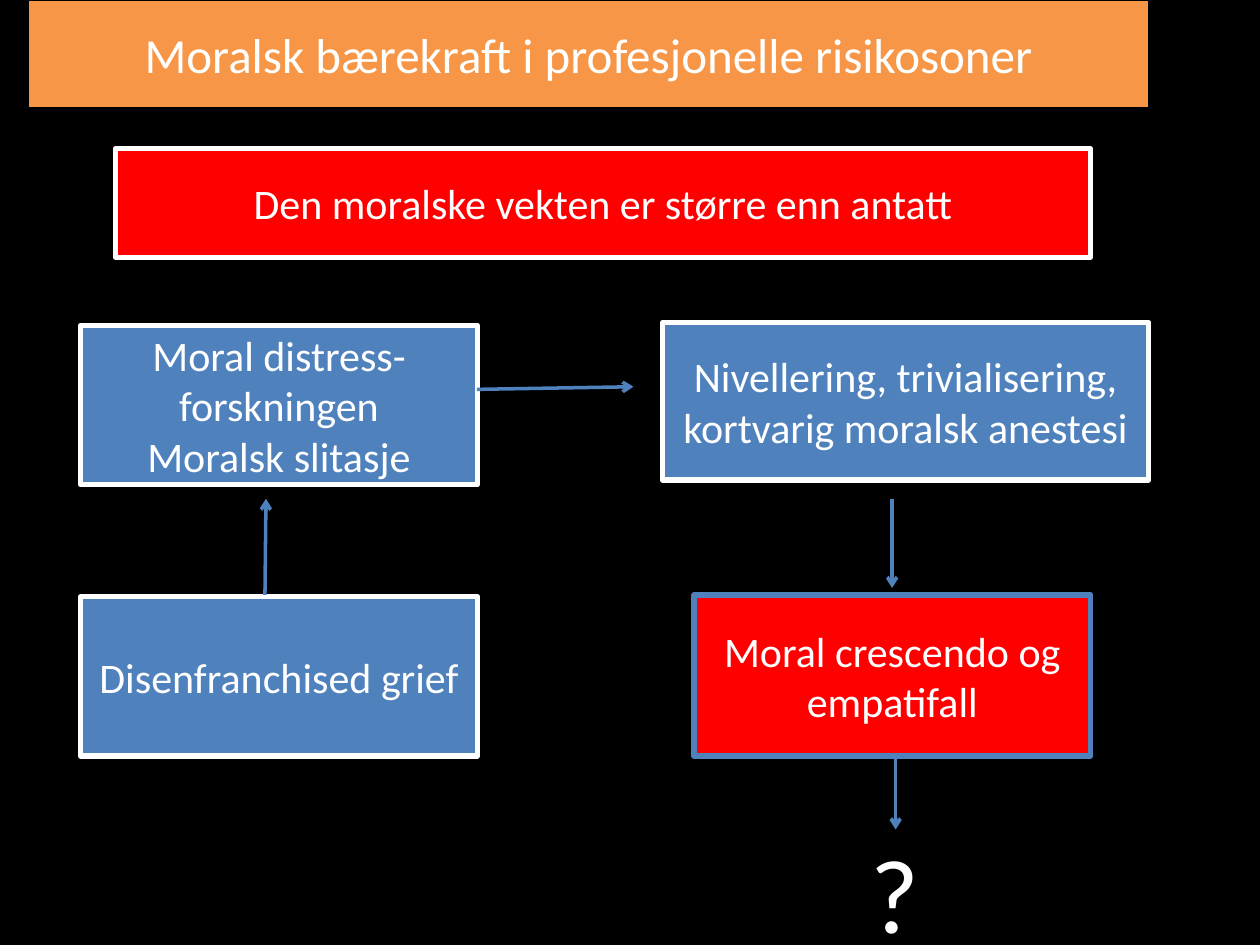
"""Build a slide on moral strain as a flow of boxes and arrows."""
from lxml import etree
from pptx import Presentation
from pptx import util as u
from pptx.dml.color import RGBColor
from pptx.enum import shapes, text
from pptx.oxml.ns import qn

HUES = {"black": "000000", "white": "FFFFFF", "blue": "4F81BD",
        "red": "FF0000", "orange": "F79646"}


class Deck:
    """Hold the style and the current slide."""

    def __init__(self, wide, high):
        self.file = Presentation()
        self.file.slide_width, self.file.slide_height = u.Pt(wide), u.Pt(high)
        self.slide = self.file.slides.add_slide(self.file.slide_layouts[5])
        self.font = "Calibri"
        self.paint(self.slide.background.fill, "black")

    def paint(self, fill, hue):
        """Fill with a named colour."""
        fill.solid()
        fill.fore_color.rgb = RGBColor.from_string(HUES[hue])

    def edge(self, line, hue, width):
        """Set the colour and width of a line."""
        self.paint(line.fill, hue)
        line.width = u.Pt(width)

    def letter(self, shape, words, size, align=text.PP_ALIGN.CENTER):
        """Set the text of a shape and format its runs."""
        frame = shape.text_frame
        frame.text = words
        for para in frame.paragraphs:
            para.alignment = align
            for run in para.runs:
                run.font.name, run.font.size = self.font, u.Pt(size)
                run.font.color.rgb = RGBColor.from_string(HUES["white"])
        return frame

    def title(self, words, area):
        """Place the title as a coloured bar."""
        bar = self.slide.shapes.title
        bar.left, bar.top, bar.width, bar.height = map(u.Pt, area)
        self.paint(bar.fill, "orange")
        self.edge(bar.line, "black", 0.75)
        frame = self.letter(bar, words, 28)
        frame.auto_size = text.MSO_AUTO_SIZE.NONE
        frame.vertical_anchor = text.MSO_ANCHOR.MIDDLE

    def box(self, words, area, fill="blue", line="white"):
        """Add a box with centred text."""
        box = self.slide.shapes.add_shape(
            shapes.MSO_SHAPE.RECTANGLE, *map(u.Pt, area))
        box.shadow.inherit = False
        self.paint(box.fill, fill)
        self.edge(box.line, line, 3)
        frame = self.letter(box, words, 24)
        frame.word_wrap = True
        frame.vertical_anchor = text.MSO_ANCHOR.MIDDLE

    def arrow(self, *ends):
        """Add an arrow from one point to another."""
        line = self.slide.shapes.add_connector(
            shapes.MSO_CONNECTOR.STRAIGHT, *map(u.Pt, ends))
        self.edge(line.line, "blue", 2)
        props = line.element.spPr
        etree.SubElement(props.find(qn("a:ln")), qn("a:tailEnd"), type="arrow")
        etree.SubElement(props, qn("a:effectLst"))

    def label(self, words, area, size):
        """Add a line of free text."""
        note = self.slide.shapes.add_textbox(*map(u.Pt, area))
        frame = self.letter(note, words, size, text.PP_ALIGN.LEFT)
        frame.word_wrap = False


def main():
    """Lay out the slide and save it."""
    deck = Deck(720, 540)
    left, wide, high = 46, 226.8, 91
    deck.title("Moralsk bærekraft i profesjonelle risikosoner",
               (16, 0, 640.5, 61.7))
    deck.box("Den moralske vekten er større enn antatt",
             (66.2, 85, 556.8, 62), "red")
    deck.box("Moral distress-forskningen\nMoralsk slitasje",
             (left, 186, wide, high))
    deck.box("Nivellering, trivialisering, kortvarig moralsk anestesi",
             (378.5, 184.3, 278, 90))
    deck.box("Disenfranchised grief", (left, 341, wide, high))
    deck.box("Moral crescendo og empatifall",
             (396.5, 340, wide, 92), "red", "blue")
    for ends in ((272.5, 222.5, 362, 221), (509.8, 285, 509.8, 336),
                 (511.8, 432, 511.8, 474), (151.4, 340, 152, 285)):
        deck.arrow(*ends)
    deck.label("?", (490.5, 470, 42.5, 80), 60)
    deck.file.save("out.pptx")


if __name__ == "__main__":
    main()
